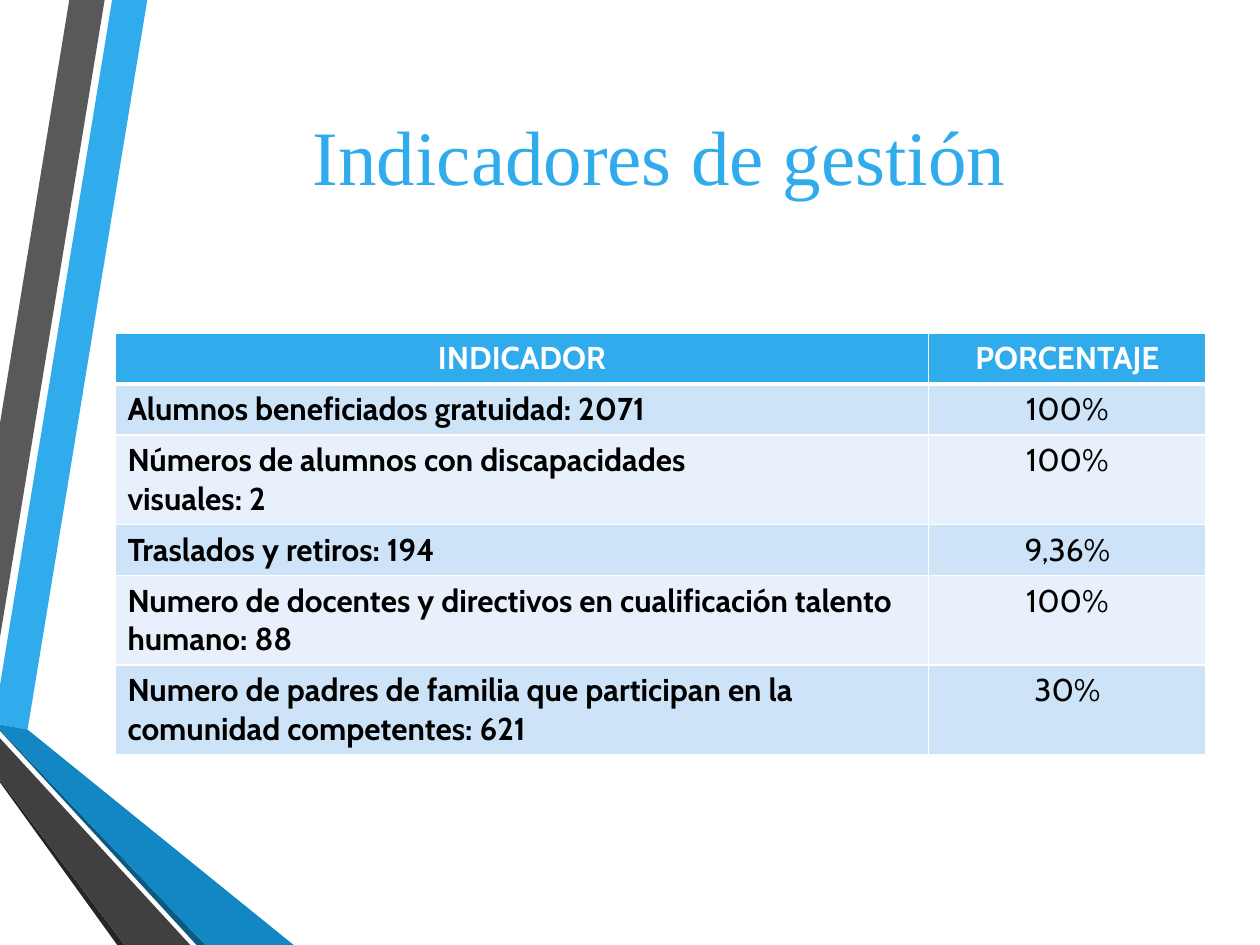
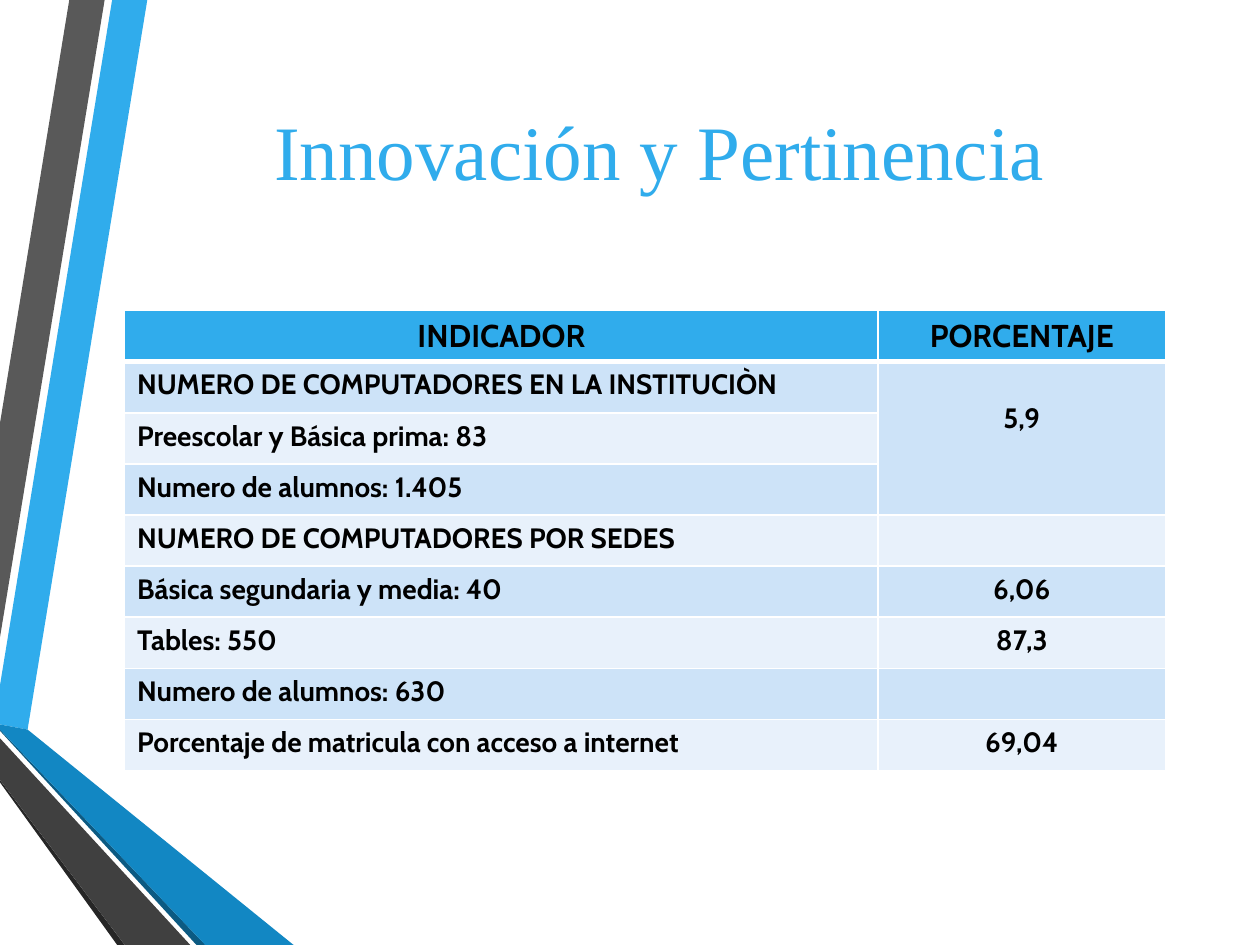
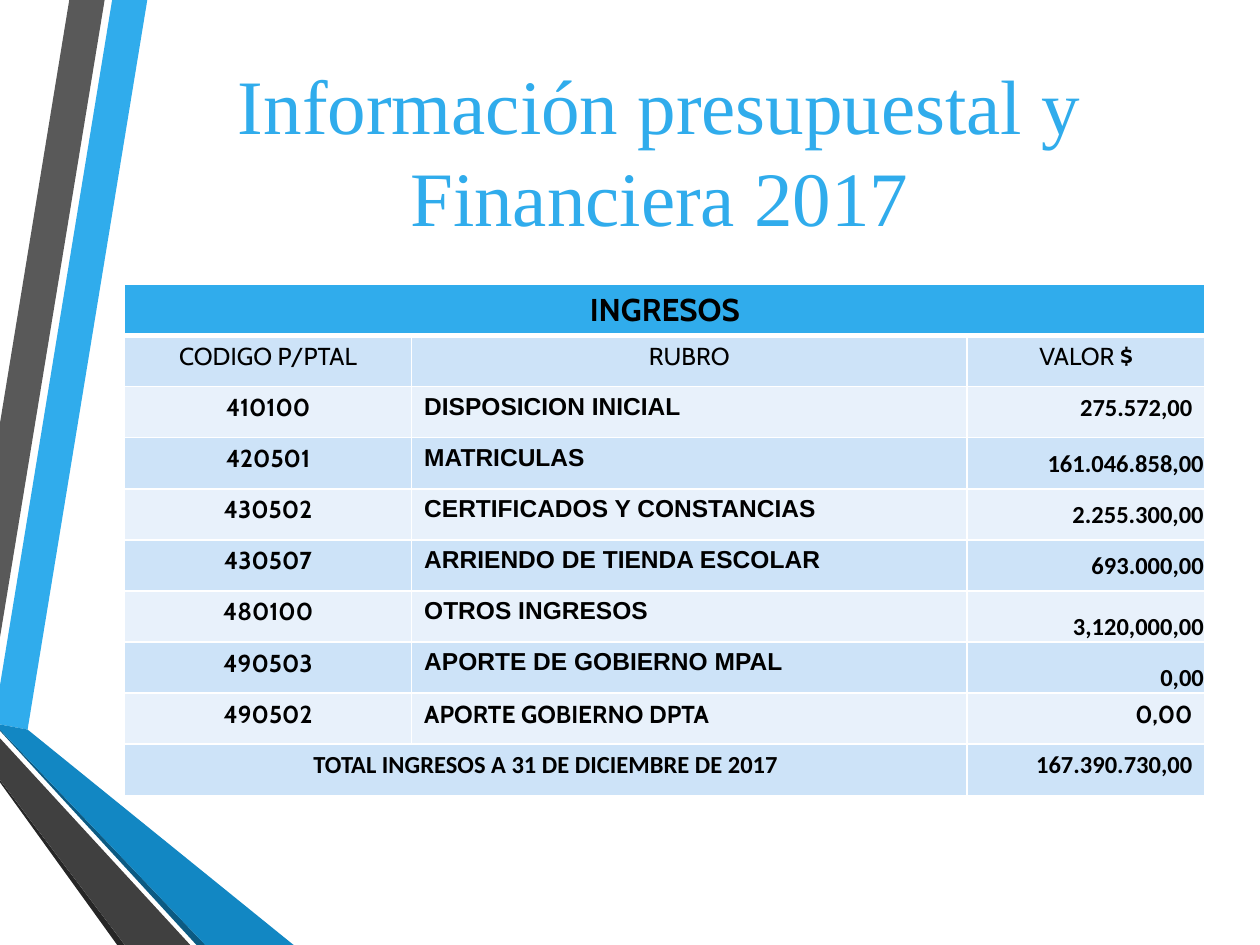
from lxml import etree
from pptx import Presentation
from pptx.dml.color import RGBColor
from pptx.enum.text import MSO_ANCHOR, MSO_AUTO_SIZE, PP_ALIGN
from pptx.oxml.ns import qn
from pptx.util import Pt

LEFT, CENTER, RIGHT = PP_ALIGN.LEFT, PP_ALIGN.CENTER, PP_ALIGN.RIGHT
TOP, MIDDLE, BOTTOM = MSO_ANCHOR.TOP, MSO_ANCHOR.MIDDLE, MSO_ANCHOR.BOTTOM
NO_AUTOFIT = MSO_AUTO_SIZE.NONE
TITLE_ONLY = 5

BLUE, WHITE, BLACK = "30ACEC", "FFFFFF", "000000"
BAND_FILLS = ("E8F1FB", "CDE3F8")  # even rows, odd rows
ROW_HEIGHT = 29.2

# Ribbons along the left edge: fill and outline in points
RIBBONS = [
    (BLUE, [(0, 391.7), (0, 414), (15.8, 416.9), (84.2, 0), (64.1, 0)]),
    ("595959", [(59.8, 0), (39.6, 0), (0, 241.9), (0, 364.3)]),
    ("262626", [(0, 445.7), (0, 447.1), (67, 540), (71.3, 540)]),
    ("0C5A82", [(0, 416.9), (0, 417.6), (112.3, 540), (117.4, 540)]),
    ("1287C3", [(0, 416.9), (117.4, 540), (167.8, 540), (15.8, 416.9), (0, 414)]),
    ("404040", [(0, 445.7), (71.3, 540), (108.7, 540), (0, 421.9)]),
]

# Cell formats
BASE = {"size": Pt(18), "name": "Cabin", "bold": True, "color": BLACK,
        "alignment": LEFT, "vertical_anchor": TOP}
CENTERED = {"alignment": CENTER}
FONT_KEYS = ("size", "name", "bold")
PARAGRAPH_KEYS = ("alignment",)


def color(hex_code):
    return RGBColor.from_string(hex_code)


def set_values(target, values):
    for key, value in values.items():
        setattr(target, key, value)


class Deck:
    """Holds the shared style and the slide being built."""

    def __init__(self):
        self.presentation = Presentation()
        self.presentation.slide_width = Pt(720)
        self.presentation.slide_height = Pt(540)
        self.slide = None

    def add_slide(self, title, top=31.7, height=108):
        layout = self.presentation.slide_layouts[TITLE_ONLY]
        self.slide = self.presentation.slides.add_slide(layout)
        for fill, points in RIBBONS:
            self.add_ribbon(fill, points)
        self.add_title(title, top, height)

    def add_ribbon(self, fill, points):
        vertices = [(Pt(x), Pt(y)) for x, y in points]
        builder = self.slide.shapes.build_freeform(*vertices[0])
        builder.add_line_segments(vertices[1:], close=True)
        shape = builder.convert_to_shape()
        shape.shadow.inherit = False
        shape.fill.solid()
        shape.fill.fore_color.rgb = color(fill)
        shape.line.fill.background()

    def add_title(self, text, top, height):
        title = self.slide.shapes.title
        set_values(title, {"left": Pt(93.6), "top": Pt(top),
                           "width": Pt(566.6), "height": Pt(height)})
        set_values(title.text_frame, {"text": text, "word_wrap": True,
                                      "auto_size": NO_AUTOFIT,
                                      "vertical_anchor": MIDDLE})
        paragraph = title.text_frame.paragraphs[0]
        paragraph.alignment = CENTER
        set_values(paragraph.font, {"size": Pt(44), "name": "Times New Roman"})
        paragraph.font.color.rgb = color(BLUE)

    def add_table(self, left, top, widths, rows, column_formats, header=None,
                  body=None, special=None, merges=()):
        """Later formats win: base, body, column, then single cells."""
        frame = self.slide.shapes.add_table(
            len(rows), len(widths), Pt(left), Pt(top),
            Pt(sum(widths)), Pt(ROW_HEIGHT * len(rows)))
        table = frame.table
        table.first_row = table.horz_banding = False
        for column, width in zip(table.columns, widths):
            column.width = Pt(width)
        for row_index, texts in enumerate(rows):
            table.rows[row_index].height = Pt(ROW_HEIGHT)
            for column_index, text in enumerate(texts):
                cell = table.cell(row_index, column_index)
                if row_index == 0:
                    values = {**BASE, **CENTERED, **(header or {})}
                else:
                    values = {**BASE, **(body or {}),
                              **column_formats[column_index]}
                values.update((special or {}).get((row_index, column_index), {}))
                self.write_cell(cell, text, values)
                self.paint_cell(cell, row_index)
        for first, last in merges:
            table.cell(*first).merge(table.cell(*last))
        return table

    def write_cell(self, cell, text, values):
        set_values(cell, {key: value for key, value in values.items()
                          if key not in FONT_KEYS + PARAGRAPH_KEYS + ("color",)})
        if not text:
            return
        cell.text_frame.text = text
        for paragraph in cell.text_frame.paragraphs:
            set_values(paragraph, {key: values[key] for key in PARAGRAPH_KEYS})
            for run in paragraph.runs:
                self.format_run(run, values)

    def format_run(self, run, values):
        set_values(run.font, {key: values[key] for key in FONT_KEYS})
        run.font.color.rgb = color(values["color"])

    def paint_cell(self, cell, row_index):
        cell.fill.solid()
        fill = BLUE if row_index == 0 else BAND_FILLS[row_index % 2]
        cell.fill.fore_color.rgb = color(fill)
        # Borders come before the fill in the cell properties
        widths = {"a:lnL": 1, "a:lnR": 1, "a:lnT": 3 if row_index == 1 else 1,
                  "a:lnB": 3 if row_index == 0 else 1}
        properties = cell._tc.get_or_add_tcPr()
        for position, (tag, width) in enumerate(widths.items()):
            line = etree.Element(qn(tag), w=str(Pt(width)))
            solid = etree.SubElement(line, qn("a:solidFill"))
            etree.SubElement(solid, qn("a:srgbClr"), val=WHITE)
            properties.insert(position, line)


def add_management_slide(deck):
    deck.add_slide("Indicadores de gestión", top=9.4, height=158.4)
    rows = [
        ("INDICADOR", "PORCENTAJE"),
        ("Alumnos beneficiados gratuidad: 2071", "100%"),
        ("Números de alumnos con discapacidades\nvisuales: 2", "100%"),
        ("Traslados y retiros: 194", "9,36%"),
        ("Numero de docentes y directivos en cualificación talento humano: 88", "100%"),
        ("Numero de padres de familia que participan en la comunidad competentes: 621",
         "30%"),
    ]
    deck.add_table(65.7, 190.2, (465, 158.5), rows,
                   [{}, {**CENTERED, "bold": False}], header={"color": WHITE})


def add_innovation_slide(deck):
    deck.add_slide("Innovación y Pertinencia")
    rows = [
        ("INDICADOR", "PORCENTAJE"),
        ("NUMERO DE COMPUTADORES EN LA INSTITUCIÒN", "5,9"),
        ("Preescolar y Básica prima: 83", ""),
        ("Numero de alumnos: 1.405", ""),
        ("NUMERO DE COMPUTADORES POR SEDES", ""),
        ("Básica segundaria y media: 40", "6,06"),
        ("Tables: 550", "87,3"),
        ("Numero de alumnos: 630", ""),
        ("Porcentaje de matricula con acceso a internet", "69,04"),
    ]
    deck.add_table(71.2, 177.5, (430.6, 164.2), rows, [{}, CENTERED],
                   body={"size": Pt(16)},
                   special={(1, 1): {"margin_top": Pt(23)}},
                   merges=[((1, 1), (3, 1))])


def add_budget_slide(deck):
    deck.add_slide("Información presupuestal y Financiera 2017")
    rows = [
        ("INGRESOS", "", ""),
        ("CODIGO P/PTAL", "RUBRO", "VALOR "),
        ("410100", "DISPOSICION INICIAL", "275.572,00"),
        ("420501", "MATRICULAS", "161.046.858,00"),
        ("430502", "CERTIFICADOS Y CONSTANCIAS", "2.255.300,00"),
        ("430507", "ARRIENDO DE TIENDA ESCOLAR", "693.000,00"),
        ("480100", "OTROS INGRESOS", "3,120,000,00"),
        ("490503", "APORTE DE GOBIERNO MPAL", "0,00"),
        ("490502", "APORTE GOBIERNO DPTA", "0,00"),
        ("TOTAL INGRESOS A 31 DE DICIEMBRE DE 2017", "", "167.390.730,00"),
    ]
    cabin = {"name": "Cabin"}
    heading = {**CENTERED, **cabin, "bold": False}
    tight = {"margin_left": Pt(0.7), "margin_right": Pt(0.7),
             "margin_top": Pt(0.7), "margin_bottom": Pt(0)}
    special = {(1, column): heading for column in range(3)}
    special.update({(row, 2): {**tight, "vertical_anchor": MIDDLE if row < 6 else BOTTOM}
                    for row in range(3, 8)})
    special.update({(8, 1): cabin, (8, 2): cabin, (9, 0): {"name": "Calibri"}})
    body = {"size": Pt(14)}
    table = deck.add_table(
        71.2, 162.5, (164, 317.5, 136), rows,
        [CENTERED, {"name": "Arial"}, {"name": "Calibri", "alignment": RIGHT}],
        body=body, special=special,
        merges=[((0, 0), (0, 2)), ((9, 0), (9, 1))])
    currency = table.cell(1, 2).text_frame.paragraphs[0].add_run()
    currency.text = "$"
    deck.format_run(currency, {**BASE, **body})


def main():
    deck = Deck()
    add_management_slide(deck)
    add_innovation_slide(deck)
    add_budget_slide(deck)
    deck.presentation.save("out.pptx")


if __name__ == "__main__":
    main()
